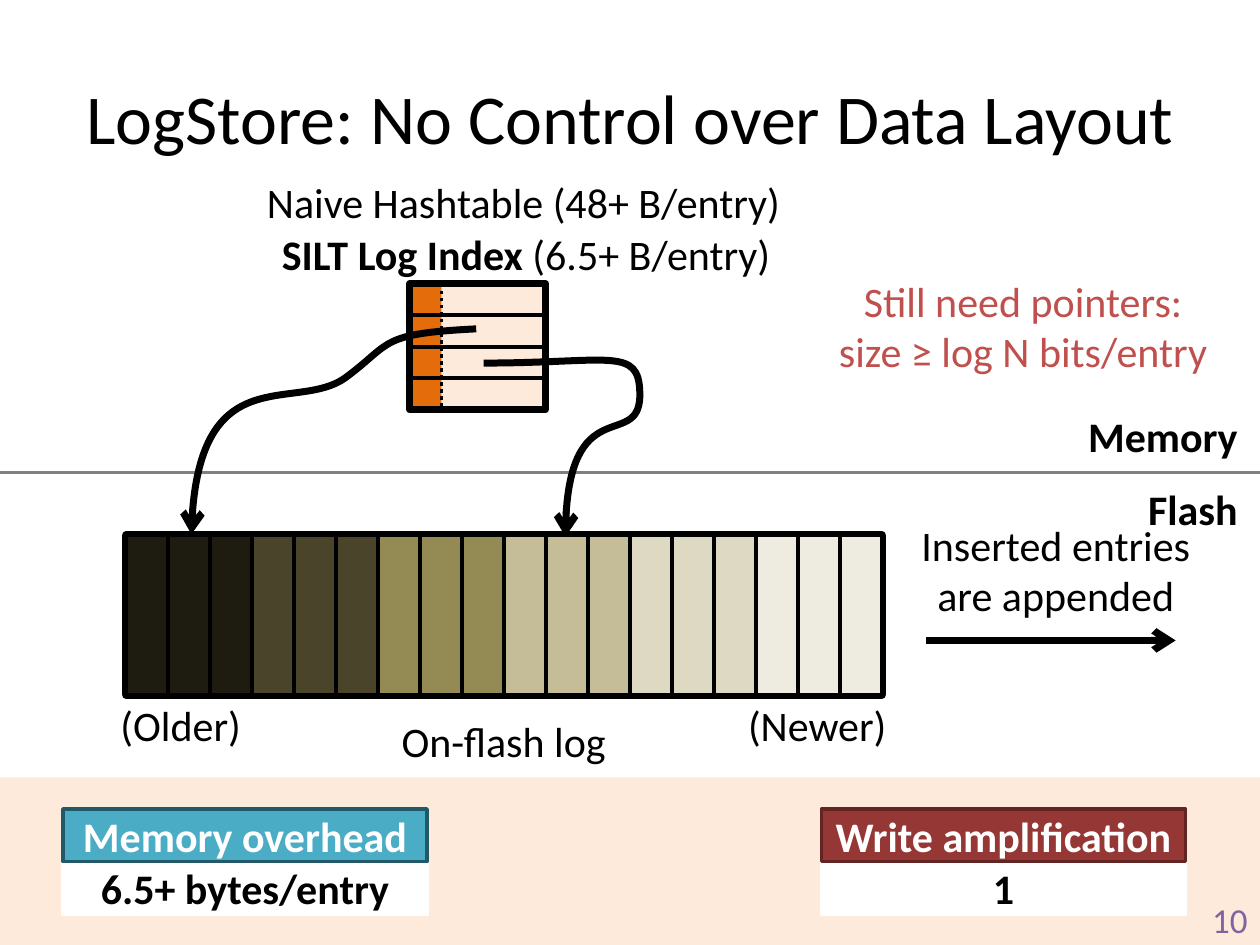
from lxml.etree import SubElement
from pptx import Presentation
from pptx.dml.color import RGBColor
from pptx.enum.dml import MSO_LINE
from pptx.enum.shapes import MSO_CONNECTOR, MSO_SHAPE
from pptx.enum.text import MSO_ANCHOR, PP_ALIGN
from pptx.oxml.ns import qn
from pptx.util import Cm, Pt

BLACK = RGBColor(0, 0, 0)
WHITE = RGBColor(255, 255, 255)
GREY = RGBColor(0x80, 0x80, 0x80)
CREAM = RGBColor(0xFD, 0xEA, 0xDA)
ORANGE = RGBColor(0xE4, 0x6C, 0x0A)
RED = RGBColor(0xC0, 0x50, 0x4D)
PURPLE = RGBColor(0x80, 0x64, 0xA2)
TEAL, DARK_TEAL = RGBColor(0x4B, 0xAC, 0xC6), RGBColor(0x21, 0x59, 0x68)
MAROON, DARK_MAROON = RGBColor(0x95, 0x37, 0x35), RGBColor(0x63, 0x25, 0x23)
AGE_COLORS = [RGBColor.from_string(c) for c in
              ("1E1C11", "4A452A", "948A54", "C4BD97", "DDD9C3", "EEECE1")]
CELLS_PER_AGE = 3


def write(tf, runs, align=PP_ALIGN.CENTER, **font):
    """Fill a text frame with (text, bold) runs; a newline becomes a line break."""
    tf.word_wrap = True
    tf.vertical_anchor = MSO_ANCHOR.MIDDLE
    p = tf.paragraphs[0]
    p.alignment = align
    style = {"name": "Calibri", "size": Pt(24), "color": BLACK} | font
    for text, bold in runs:
        for i, part in enumerate(text.split("\n")):
            if i:
                p.add_line_break()
            r = p.add_run()
            r.text = part
            for key, value in (style | {"bold": bold}).items():
                if key == "color":
                    r.font.color.rgb = value
                else:
                    setattr(r.font, key, value)


def add_label(s, box, text, bold=False, **options):
    sp = s.shapes.add_textbox(*map(Cm, box))
    runs = [(text, bold)] if isinstance(text, str) else text
    write(sp.text_frame, runs, **options)


def add_rect(s, box, fill=None, line=None, width=2):
    sp = s.shapes.add_shape(MSO_SHAPE.RECTANGLE, *map(Cm, box))
    sp.shadow.inherit = False
    if fill is None:
        sp.fill.background()
    else:
        sp.fill.solid()
        sp.fill.fore_color.rgb = fill
    if line is None:
        sp.line.fill.background()
    else:
        sp.line.color.rgb = line
        sp.line.width = Pt(width)
    return sp


def add_arrowhead(sp):
    SubElement(sp.line._get_or_add_ln(), qn("a:tailEnd"), type="arrow")


def add_line(s, x1, y1, x2, y2, color=BLACK, width=2):
    cx = s.shapes.add_connector(MSO_CONNECTOR.STRAIGHT, *map(Cm, (x1, y1, x2, y2)))
    cx.line.color.rgb = color
    cx.line.width = Pt(width)
    SubElement(cx._element.spPr, qn("a:effectLst"))
    return cx


def add_curved_arrow(s, *points):
    """Draw Bézier curves from the first point; then two controls and an end each."""
    start, *rest = [(Cm(x), Cm(y)) for x, y in points]
    fb = s.shapes.build_freeform(*start)
    fb.add_line_segments(rest, close=False)
    sp = fb.convert_to_shape()
    path = sp._element.find(".//" + qn("a:path"))
    segments = path.findall(qn("a:lnTo"))
    for i in range(0, len(segments), 3):
        curve = SubElement(path, qn("a:cubicBezTo"))
        for segment in segments[i:i + 3]:
            curve.append(segment[0])
            path.remove(segment)
    sp.shadow.inherit = False
    sp.fill.background()
    sp.line.color.rgb = BLACK
    sp.line.width = Pt(4)
    add_arrowhead(sp)


def add_index(s, box, rows=4, tag_width=0.64):
    x, y, w, h = box
    add_rect(s, box, CREAM)
    add_rect(s, (x, y, tag_width, h), ORANGE)
    for i in range(1, rows):
        row_y = y + i * h / rows
        add_line(s, x, row_y, x + w, row_y)
    divider = add_line(s, x + tag_width, y, x + tag_width, y + h)
    divider.line.dash_style = MSO_LINE.ROUND_DOT
    add_rect(s, box, line=BLACK, width=4)
    add_label(s, (x - 4.45, y - 2.26, 13.49, 1.2), "Naive Hashtable (48+ B/entry)")
    add_label(s, (x - 4.4, y - 1.2, 13.49, 1.2),
              [("SILT Log Index", True), (" (6.5+ B/entry)", False)])


def add_pointers(s, x, y):
    """Draw the two pointers from the index at (x, y) down to the log."""
    newer = [(1.49, 1.6), (4.03, 1.6), (4.62, 1.26), (4.64, 2.2),
             (4.67, 3.37), (3.14, 2.03), (3.14, 5.1)]
    older = [(1.34, 0.91), (-0.64, 1.01), (-0.34, 1.19), (-1.3, 1.9),
             (-2.27, 2.59), (-4.32, 1.42), (-4.4, 5.05)]
    for offsets in (newer, older):
        add_curved_arrow(s, *((x + dx, y + dy) for dx, dy in offsets))


def add_log(s, box):
    x, y, w, h = box
    add_rect(s, box, line=BLACK, width=5)
    count = len(AGE_COLORS) * CELLS_PER_AGE
    cell_w = w / count
    for i in range(count):
        add_rect(s, (x + i * cell_w, y, cell_w, h),
                 AGE_COLORS[i // CELLS_PER_AGE], BLACK)
    add_label(s, (x - 2.03, y + h + 0.08, 6.27, 1.07), "(Older)")
    add_label(s, (x + 10.8, y + h + 0.08, 6.27, 1.07), "(Newer)")
    add_label(s, (x + 4.23, y + h + 0.4, 6.77, 1.07), "On-flash log")
    add_label(s, (x + w + 0.43, y - 0.43, 6.15, 2.24), "Inserted entries are appended")
    arrow = add_line(s, x + w + 0.89, y + 2.11, x + w + 5.92, y + 2.11, width=4)
    add_arrowhead(arrow)


def add_tiers(s, y, right):
    """Separate memory, above y, from flash below it."""
    add_line(s, 0, y, 25.4, y, GREY, 1.5)
    for text, top in (("Memory", y - 1.27), ("Flash", y + 0.2)):
        add_label(s, (right - 3.81, top, 3.81, 1.07), text, True, align=PP_ALIGN.RIGHT)


def add_metric(s, box, name, value, fill, line):
    x, y, w, h = box
    half = h / 2
    parts = ((y + half, value, WHITE, WHITE, BLACK), (y, name, fill, line, WHITE))
    for top, text, back, edge, color in parts:
        sp = add_rect(s, (x, top, w, half), back, edge)
        tf = sp.text_frame
        for side in ("left", "right", "top", "bottom"):
            setattr(tf, f"margin_{side}", 0)
        write(tf, [(text, True)], color=color)


def add_summary(s, box):
    x, y, w, h = box
    add_rect(s, box, CREAM)
    add_metric(s, (x + 1.27, y + 0.64, 7.34, 2.12), "Memory overhead",
               "6.5+ bytes/entry", TEAL, DARK_TEAL)
    add_metric(s, (x + 16.56, y + 0.64, 7.34, 2.12), "Write amplification",
               "1", MAROON, DARK_MAROON)
    add_label(s, (x + w - 5.92, y + h - 1.02, 5.92, 1.02), "10",
              align=PP_ALIGN.RIGHT, size=Pt(20), color=PURPLE)


def add_title(s, box, text):
    title = s.shapes.title
    title.left, title.top, title.width, title.height = map(Cm, box)
    write(title.text_frame, [(text, False)], size=Pt(40))


def main():
    prs = Presentation()
    prs.slide_width, prs.slide_height = Cm(25.4), Cm(19.05)
    s = prs.slides.add_slide(prs.slide_layouts[5])
    add_title(s, (1.27, 0.76, 22.86, 3.18), "LogStore: No Control over Data Layout")
    add_tiers(s, 9.52, 25.2)
    add_index(s, (8.26, 5.72, 2.74, 2.54))
    add_label(s, (16.08, 4.88, 9.09, 3.38),
              "Still need pointers:\nsize ≥ log N bits/entry", color=RED)
    add_pointers(s, 8.26, 5.72)
    add_log(s, (2.54, 10.8, 15.24, 3.2))
    add_summary(s, (0, 15.67, 25.4, 3.38))
    prs.save("out.pptx")


if __name__ == "__main__":
    main()
